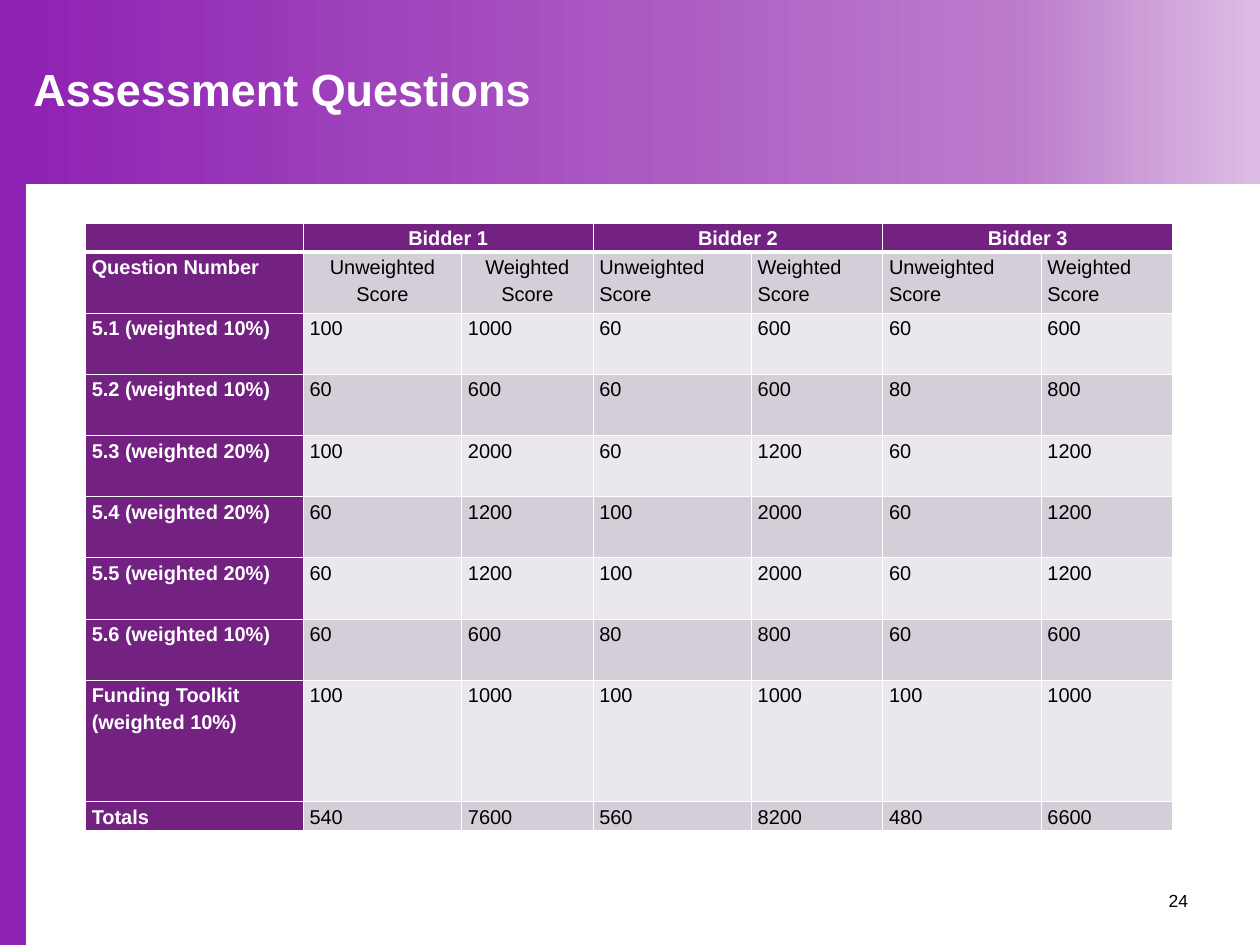
"""Build the Assessment Questions slide with a bidder score table."""
import pptx
import pptx.dml.color
import pptx.enum.shapes
import pptx.enum.text
import pptx.oxml.ns
import pptx.util
from lxml import etree

Inches = pptx.util.Inches
Pt = pptx.util.Pt
RGB = pptx.dml.color.RGBColor.from_string
qn = pptx.oxml.ns.qn
ALIGN = pptx.enum.text.PP_ALIGN
ANCHOR = pptx.enum.text.MSO_ANCHOR
RECTANGLE = pptx.enum.shapes.MSO_SHAPE.RECTANGLE

THEME = {
    "font": "Arial",
    "accent": "8F23B3",
    "banner": [(0, "8F23B3"), (80, "BC7BCC"), (100, "DDBDE5")],
    "header": "732282",
    "bands": ["EBE8ED", "D5CDD8"],
    "light": "FFFFFF",
    "dark": "000000",
    "title_size": 36,
    "table_size": 16,
    "number_size": 14,
}


def write(frame, text, size, color, bold=False, align=ALIGN.LEFT, spacing=1.0):
    paragraph = frame.paragraphs[0]
    paragraph.alignment = align
    paragraph.line_spacing = spacing
    run = paragraph.add_run()
    run.text = text
    font_format = {"name": THEME["font"], "size": Pt(size), "bold": bold}
    for attribute, value in font_format.items():
        setattr(run.font, attribute, value)
    run.font.color.rgb = RGB(color)


def add_border(cell, side, width):
    border = etree.SubElement(cell._tc.get_or_add_tcPr(), qn(f"a:{side}"), w=str(Pt(width)))
    paint = etree.SubElement(border, qn("a:solidFill"))
    etree.SubElement(paint, qn("a:srgbClr"), val=THEME["light"])


presentation = pptx.Presentation()
presentation.slide_width = Inches(14)
presentation.slide_height = Inches(10.5)
slide = presentation.slides.add_slide(presentation.slide_layouts[5])

sidebar = slide.shapes.add_shape(RECTANGLE, Inches(0), Inches(0), Inches(0.28), Inches(10.5))
sidebar.shadow.inherit = False
sidebar.fill.solid()
sidebar.fill.fore_color.rgb = RGB(THEME["accent"])
sidebar.line.color.rgb = RGB(THEME["accent"])
sidebar.line.width = Pt(2)

banner = slide.shapes.add_shape(RECTANGLE, Inches(0.27), Inches(0), Inches(13.73), Inches(2.04))
banner.shadow.inherit = False
banner.line.fill.background()
banner.fill.gradient()
banner.fill.gradient_angle = 0
stops = banner.element.find(".//" + qn("a:gsLst"))
stops.clear()
for percent, color in THEME["banner"]:
    stop = etree.SubElement(stops, qn("a:gs"), pos=str(percent * 1000))
    etree.SubElement(stop, qn("a:srgbClr"), val=color)

title = slide.shapes.title
title_place = {"left": 0.27, "top": 0, "width": 13.73, "height": 1.5}
for attribute, value in title_place.items():
    setattr(title, attribute, Inches(value))
title.text_frame.vertical_anchor = ANCHOR.BOTTOM
title.text_frame.margin_bottom = Inches(0.22)
write(title.text_frame, "Assessment Questions", THEME["title_size"], THEME["light"], bold=True)
banner.element.addnext(title.element)

page_number = slide.shapes.add_textbox(Inches(10.03), Inches(9.73), Inches(3.27), Inches(0.56))
page_number.text_frame.word_wrap = True
page_number.text_frame.vertical_anchor = ANCHOR.MIDDLE
write(page_number.text_frame, "24", THEME["number_size"], THEME["dark"], align=ALIGN.RIGHT)

score_rows = [
    ["", "Bidder 1", "", "Bidder 2", "", "Bidder 3", ""],
    ["Question Number"] + ["Unweighted Score", "Weighted Score"] * 3,
    ["5.1 (weighted 10%)", 100, 1000, 60, 600, 60, 600],
    ["5.2 (weighted 10%)", 60, 600, 60, 600, 80, 800],
    ["5.3 (weighted 20%)", 100, 2000, 60, 1200, 60, 1200],
    ["5.4 (weighted 20%)", 60, 1200, 100, 2000, 60, 1200],
    ["5.5 (weighted 20%)", 60, 1200, 100, 2000, 60, 1200],
    ["5.6 (weighted 10%)", 60, 600, 80, 800, 60, 600],
    ["Funding Toolkit (weighted 10%)", 100, 1000, 100, 1000, 100, 1000],
    ["Totals", 540, 7600, 560, 8200, 480, 6600],
]
column_widths = [2.42] + [1.76, 1.46] * 3
row_heights = [0.32] + [0.68] * 7 + [1.35, 0.32]
cell_format = {
    "margin_left": Inches(0.07),
    "margin_right": Inches(0.07),
    "margin_top": 0,
    "margin_bottom": 0,
}

scores = slide.shapes.add_table(
    len(row_heights), len(column_widths), Inches(0.95), Inches(2.48),
    Inches(sum(column_widths)), Inches(sum(row_heights)),
).table
scores.horz_banding = False
for column, width in zip(scores.columns, column_widths):
    column.width = Inches(width)
for row, height in zip(scores.rows, row_heights):
    row.height = Inches(height)
for first in (1, 3, 5):
    scores.cell(0, first).merge(scores.cell(0, first + 1))

for row_index, values in enumerate(score_rows):
    for column_index, value in enumerate(values):
        cell = scores.cell(row_index, column_index)
        for attribute, setting in cell_format.items():
            setattr(cell, attribute, setting)
        borders = {
            "lnL": 1,
            "lnR": 1,
            "lnT": 3 if row_index == 1 else 1,
            "lnB": 3 if row_index == 0 else 1,
        }
        for side, width in borders.items():
            add_border(cell, side, width)
        heading = row_index == 0 or column_index == 0
        cell.fill.solid()
        cell.fill.fore_color.rgb = RGB(THEME["header"] if heading else THEME["bands"][row_index % 2])
        if value == "":
            continue
        centred = row_index == 0 or (row_index == 1 and column_index in (1, 2))
        write(
            cell.text_frame, str(value), THEME["table_size"],
            THEME["light"] if heading else THEME["dark"], bold=heading,
            align=ALIGN.CENTER if centred else ALIGN.LEFT, spacing=1.2,
        )

presentation.save("out.pptx")
